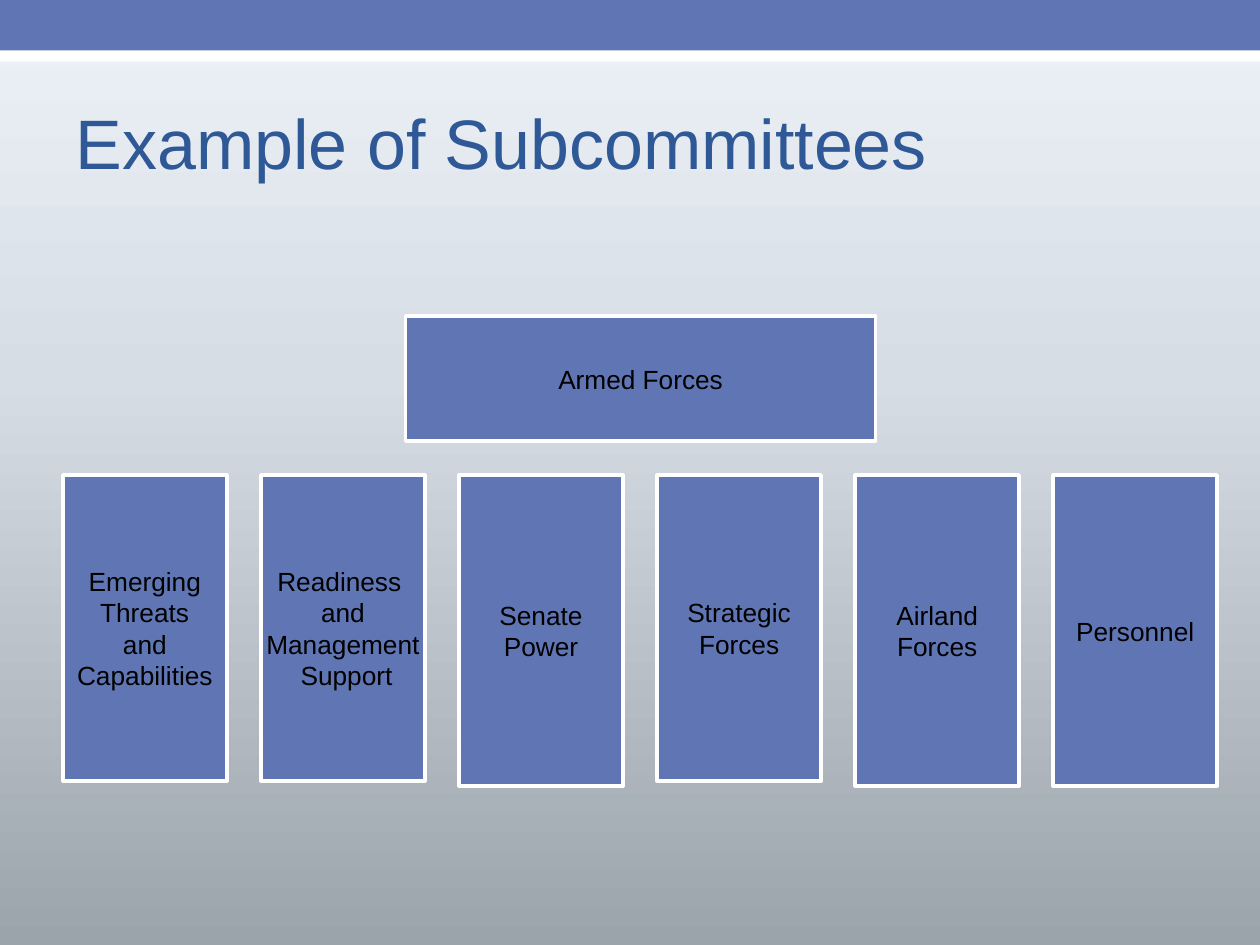
from copy import deepcopy

from pptx import Presentation
from pptx.dml.color import RGBColor
from pptx.enum.shapes import MSO_SHAPE
from pptx.enum.text import MSO_ANCHOR, PP_ALIGN
from pptx.oxml.ns import qn
from pptx.util import Inches, Pt

TITLE = "Example of Subcommittees"
PARENT = "Armed Forces"
# Subcommittee name and box height
CHILDREN = [
    ("Emerging\n Threats \nand Capabilities", 2.43),
    ("Readiness \nand Management\n Support", 2.43),
    ("Senate Power", 2.47),
    ("Strategic Forces", 2.43),
    ("Airland Forces", 2.47),
    ("Personnel", 2.47),
]
BACKDROP = [(0, "ECF2F7"), (0.4, "D7DDE5"), (1, "9BA3AB")]
BLUE, WHITE, BLACK, NAVY = "6076B4", "FFFFFF", "000000", "2F5897"
LEFT, TOP, WIDTH, STEP = 0.5, 3.77, 1.3, 1.572


def rgb(code):
    return RGBColor.from_string(code)


def style(para, size, color):
    para.font.name = "Arial"
    para.font.size = Pt(size)
    para.font.color.rgb = rgb(color)


def add_rect(slide, left, top, width, height, color):
    rect = slide.shapes.add_shape(
        MSO_SHAPE.RECTANGLE, *map(Inches, (left, top, width, height)))
    rect.shadow.inherit = False
    rect.fill.solid()
    rect.fill.fore_color.rgb = rgb(color)
    rect.line.fill.background()
    return rect


def add_box(slide, text, left, top, width, height):
    """Add a labelled box of the committee chart."""
    box = add_rect(slide, left, top, width, height, BLUE)
    box.line.color.rgb = rgb(WHITE)
    box.line.width = Pt(2.08)
    frame = box.text_frame
    frame.word_wrap = True
    frame.vertical_anchor = MSO_ANCHOR.MIDDLE
    frame.margin_left = frame.margin_right = Inches(0.01)
    frame.margin_top = frame.margin_bottom = Inches(0.01)
    frame.text = text
    for para in frame.paragraphs:
        para.alignment = PP_ALIGN.CENTER
        style(para, 15, BLACK)


def paint_backdrop(slide):
    fill = slide.background.fill
    fill.gradient()
    fill.gradient_angle = 270
    stops = next(slide.element.iter(qn("a:gsLst")))
    stops.insert(1, deepcopy(stops[0]))
    for stop, (place, color) in zip(fill.gradient_stops, BACKDROP):
        stop.position = place
        stop.color.rgb = rgb(color)


def add_title(slide):
    title = slide.shapes.title
    title.left, title.top = Inches(0.5), Inches(0.58)
    title.width, title.height = Inches(9), Inches(1.08)
    title.text = TITLE
    title.text_frame.vertical_anchor = MSO_ANCHOR.MIDDLE
    para = title.text_frame.paragraphs[0]
    para.alignment = PP_ALIGN.LEFT
    style(para, 40, NAVY)


def main():
    deck = Presentation()
    deck.slide_width, deck.slide_height = Inches(10), Inches(7.5)
    slide = deck.slides.add_slide(deck.slide_layouts[5])
    paint_backdrop(slide)
    add_rect(slide, 0, 0.24, 10, 0.25, WHITE)
    add_rect(slide, 0, 0, 10, 0.4, BLUE)
    add_title(slide)
    add_box(slide, PARENT, 3.22, 2.51, 3.73, 0.99)
    for i, (name, height) in enumerate(CHILDREN):
        add_box(slide, name, LEFT + i * STEP, TOP, WIDTH, height)
    deck.save("out.pptx")


if __name__ == "__main__":
    main()
